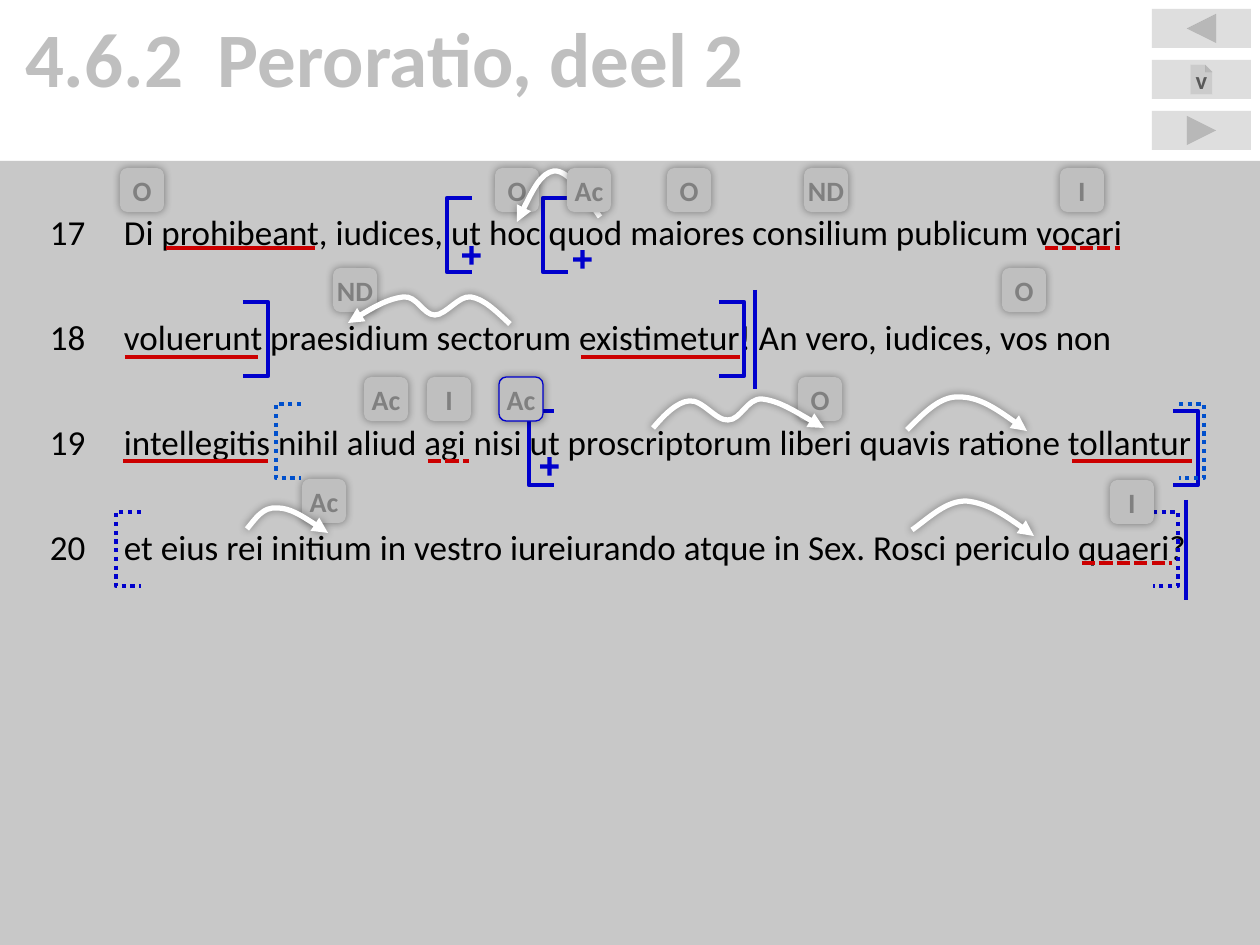
from dataclasses import dataclass
from itertools import chain

from lxml.etree import SubElement
from pptx import Presentation
from pptx.dml.color import RGBColor
from pptx.enum.dml import MSO_LINE
from pptx.enum.shapes import MSO_CONNECTOR, MSO_SHAPE
from pptx.enum.text import MSO_ANCHOR, MSO_AUTO_SIZE, PP_ALIGN
from pptx.oxml.ns import qn
from pptx.util import Emu, Pt

SCALE = 914400 / 126
COLORS = {
    "title": "BFBFBF", "panel": "BFBFBF", "text": "000000", "button": "595959",
    "badge": "808080", "clause": "0000CC", "inner": "0050CC", "verb": "CC0000",
    "arrow": "FFFFFF", "shadow": "000000",
}
FONT = "Calibri"
BADGE, BRACKET_W, BRACKET_H, PLUS = 44, 25, 74, 25
LATIN_LINES = [
    "17\tDi prohibeant, iudices, ut hoc quod maiores consilium publicum vocari",
    "18\tvoluerunt praesidium sectorum existimetur! An vero, iudices, vos non",
    "19\tintellegitis nihil aliud agi nisi ut proscriptorum liberi quavis ratione tollantur",
    "20\tet eius rei initium in vestro iureiurando atque in Sex. Rosci periculo quaeri?",
]


@dataclass
class Rule:
    x1: int
    y1: int
    x2: int
    y2: int
    color: str = "verb"
    dash: MSO_LINE | None = None


@dataclass
class Bracket:
    x: int
    y: int
    opens: bool
    color: str = "clause"
    dash: MSO_LINE | None = None


@dataclass
class Badge:
    label: str
    x: int
    y: int
    outlined: bool = False


DASH, DOT = MSO_LINE.SQUARE_DOT, MSO_LINE.ROUND_DOT
RULES = [
    Rule(166, 248, 315, 248), Rule(1045, 248, 1120, 248, dash=DASH),
    Rule(125, 357, 258, 357), Rule(581, 357, 740, 357),
    Rule(123, 461, 268, 461), Rule(428, 461, 469, 461, dash=DASH),
    Rule(1072, 461, 1192, 461), Rule(1082, 563, 1172, 563, dash=DASH),
    Rule(755, 290, 755, 389, "clause"), Rule(1186, 500, 1186, 600, "clause"),
]
BRACKETS = [
    Bracket(447, 198, True), Bracket(543, 198, True),
    Bracket(243, 302, False), Bracket(719, 302, False),
    Bracket(529, 411, True), Bracket(1173, 411, False),
    Bracket(276, 404, True, "inner", DOT), Bracket(1179, 404, False, "inner", DOT),
    Bracket(116, 512, True, dash=DOT), Bracket(1153, 512, False, dash=DOT),
]
PLUSES = [(459, 243), (570, 247), (537, 454)]
BADGES = [
    Badge("O", 120, 168), Badge("O", 495, 168), Badge("O", 667, 168),
    Badge("ND", 804, 168), Badge("I", 1060, 168),
    Badge("ND", 333, 268), Badge("O", 1002, 268),
    Badge("Ac", 364, 377), Badge("I", 427, 377), Badge("O", 798, 377),
    Badge("Ac", 302, 479), Badge("I", 1110, 480),
]
FRONT_BADGES = [Badge("Ac", 567, 168), Badge("Ac", 499, 377, True)]
# Start point, then two control points and an end point per segment
ARROWS = [
    [(600, 217), (583, 193), (568, 170), (554, 171), (541, 173), (529, 197), (517, 222)],
    [(510, 324), (496, 311), (484, 299), (471, 297), (459, 295), (446, 315), (435, 315),
     (423, 315), (417, 295), (403, 297), (388, 299), (368, 310), (348, 323)],
    [(653, 428), (664, 415), (677, 402), (689, 401), (702, 399), (716, 421), (728, 420),
     (741, 420), (747, 398), (762, 399), (779, 401), (801, 415), (824, 428)],
    [(907, 430), (924, 413), (940, 396), (959, 397), (979, 397), (1003, 413), (1027, 431)],
    [(247, 529), (256, 518), (263, 507), (277, 508), (290, 508), (309, 520), (328, 533)],
    [(912, 530), (930, 517), (946, 501), (966, 501), (987, 503), (1011, 519), (1034, 536)],
]
BUTTONS = [
    (MSO_SHAPE.ACTION_BUTTON_BACK_OR_PREVIOUS, ""),
    (MSO_SHAPE.ACTION_BUTTON_DOCUMENT, "v"),
    (MSO_SHAPE.ACTION_BUTTON_FORWARD_OR_NEXT, ""),
]


def px(*lengths: int) -> list[Emu]:
    return [Emu(round(n * SCALE)) for n in lengths]


def rgb(name: str) -> RGBColor:
    return RGBColor.from_string(COLORS[name])


def fill(sp, color: str, alpha: int = 100) -> None:
    sp.fill.solid()
    sp.fill.fore_color.rgb = rgb(color)
    if alpha < 100:
        clr = sp._element.spPr.find(qn("a:solidFill"))[0]
        SubElement(clr, qn("a:alpha"), val=str(alpha * 1000))


def stroke(sp, color: str, width: float, dash: MSO_LINE | None = None) -> None:
    sp.line.color.rgb = rgb(color)
    sp.line.width = Pt(width)
    if dash:
        sp.line.dash_style = dash


def glow(sp) -> None:
    sp.shadow.inherit = False
    effects = sp._element.spPr.find(qn("a:effectLst"))
    shadow = SubElement(effects, qn("a:outerShdw"), blurRad=str(Pt(5)), dist="0", dir="0")
    clr = SubElement(shadow, qn("a:srgbClr"), val=COLORS["shadow"])
    SubElement(clr, qn("a:alpha"), val="40000")


def set_frame(tf, insets: tuple[int, int, int, int], anchor: MSO_ANCHOR, wrap: bool = True) -> None:
    tf.margin_left, tf.margin_top, tf.margin_right, tf.margin_bottom = px(*insets)
    tf.vertical_anchor = anchor
    tf.auto_size = MSO_AUTO_SIZE.NONE
    tf.word_wrap = wrap


def set_font(p, size: int, color: str, bold: bool) -> None:
    for r in p.runs:
        r.font.name, r.font.size, r.font.bold = FONT, Pt(size), bold
        r.font.color.rgb = rgb(color)


def label(sp, text: str, size: int, color: str) -> None:
    sp.text_frame.text = text
    set_frame(sp.text_frame, (0, 0, 0, 0), MSO_ANCHOR.MIDDLE, wrap=False)
    p = sp.text_frame.paragraphs[0]
    p.alignment = PP_ALIGN.CENTER
    set_font(p, size, color, True)


def add_title(s) -> None:
    sp = s.shapes.title
    sp.left, sp.top, sp.width, sp.height = px(0, 0, 1260, 161)
    sp.text_frame.text = "4.6.2  Peroratio, deel 2"
    set_frame(sp.text_frame, (25, 10, 25, 25), MSO_ANCHOR.TOP)
    p = sp.text_frame.paragraphs[0]
    p.alignment = PP_ALIGN.LEFT
    set_font(p, 44, "title", True)


def add_latin_text(s) -> None:
    sp = s.shapes.add_shape(MSO_SHAPE.RECTANGLE, *px(0, 161, 1260, 784))
    fill(sp, "panel", 85)
    sp.line.fill.background()
    sp.shadow.inherit = False
    tf = sp.text_frame
    tf.text = "\n".join(LATIN_LINES)
    set_frame(tf, (50, 49, 49, 49), MSO_ANCHOR.TOP)
    for p in tf.paragraphs:
        p.alignment = PP_ALIGN.LEFT
        p.space_after = Pt(36)
        tabs = SubElement(p._p.get_or_add_pPr(), qn("a:tabLst"))
        SubElement(tabs, qn("a:tab"), pos=str(px(74)[0]), algn="l")
        set_font(p, 20, "text", False)


def add_button(s, kind: MSO_SHAPE, text: str, y: int) -> None:
    sp = s.shapes.add_shape(kind, *px(1152, y, 99, 39))
    fill(sp, "panel", 50)
    sp.line.fill.background()
    sp.shadow.inherit = False
    if text:
        label(sp, text, 14, "button")


def add_rule(s, rule: Rule) -> None:
    line = s.shapes.add_connector(MSO_CONNECTOR.STRAIGHT, *px(rule.x1, rule.y1, rule.x2, rule.y2))
    stroke(line, rule.color, 2.5, rule.dash)
    SubElement(line._element.spPr, qn("a:effectLst"))


def add_outline(s, points: list[tuple[int, int]]):
    builder = s.shapes.build_freeform(*points[0], scale=SCALE)
    builder.add_line_segments(points[1:], close=False)
    sp = builder.convert_to_shape()
    sp.fill.background()
    sp.shadow.inherit = False
    return sp


def add_bracket(s, b: Bracket) -> None:
    left, right, bottom = b.x, b.x + BRACKET_W, b.y + BRACKET_H
    spine, tip = (left, right) if b.opens else (right, left)
    sp = add_outline(s, [(tip, b.y), (spine, b.y), (spine, bottom), (tip, bottom)])
    stroke(sp, b.color, 2.5, b.dash)


def add_plus(s, x: int, y: int) -> None:
    sp = s.shapes.add_shape(MSO_SHAPE.MATH_PLUS, *px(x, y, PLUS, PLUS))
    sp.adjustments[0] = 0.17
    fill(sp, "clause")
    sp.line.fill.background()
    sp.shadow.inherit = False


def add_badge(s, b: Badge) -> None:
    sp = s.shapes.add_shape(MSO_SHAPE.ROUNDED_RECTANGLE, *px(b.x, b.y, BADGE, BADGE))
    fill(sp, "panel")
    if b.outlined:
        stroke(sp, "clause", 0.75)
    else:
        sp.line.fill.background()
    glow(sp)
    label(sp, b.label, 16, "badge")


def add_arrow(s, points: list[tuple[int, int]]) -> None:
    sp = add_outline(s, points)
    # Turn every three line segments into one Bézier segment
    segments = list(sp._element.iter(qn("a:lnTo")))
    for i in range(0, len(segments), 3):
        trio = segments[i:i + 3]
        curve = SubElement(trio[0].getparent(), qn("a:cubicBezTo"))
        for pt in chain.from_iterable([list(seg) for seg in trio]):
            curve.append(pt)
        for seg in trio:
            seg.getparent().remove(seg)
    stroke(sp, "arrow", 3)
    SubElement(sp._element.spPr.find(qn("a:ln")), qn("a:tailEnd"), type="triangle")
    glow(sp)


def main() -> None:
    prs = Presentation()
    prs.slide_width, prs.slide_height = px(1260, 945)
    s = prs.slides.add_slide(prs.slide_layouts[5])
    # Title, text and navigation
    add_title(s)
    add_latin_text(s)
    for i, (kind, text) in enumerate(BUTTONS):
        add_button(s, kind, text, 9 + 51 * i)
    # Grammatical marks, from back to front
    for rule in RULES:
        add_rule(s, rule)
    for bracket in BRACKETS:
        add_bracket(s, bracket)
    for x, y in PLUSES:
        add_plus(s, x, y)
    for badge in BADGES:
        add_badge(s, badge)
    for points in ARROWS:
        add_arrow(s, points)
    for badge in FRONT_BADGES:
        add_badge(s, badge)
    prs.save("out.pptx")


if __name__ == "__main__":
    main()
